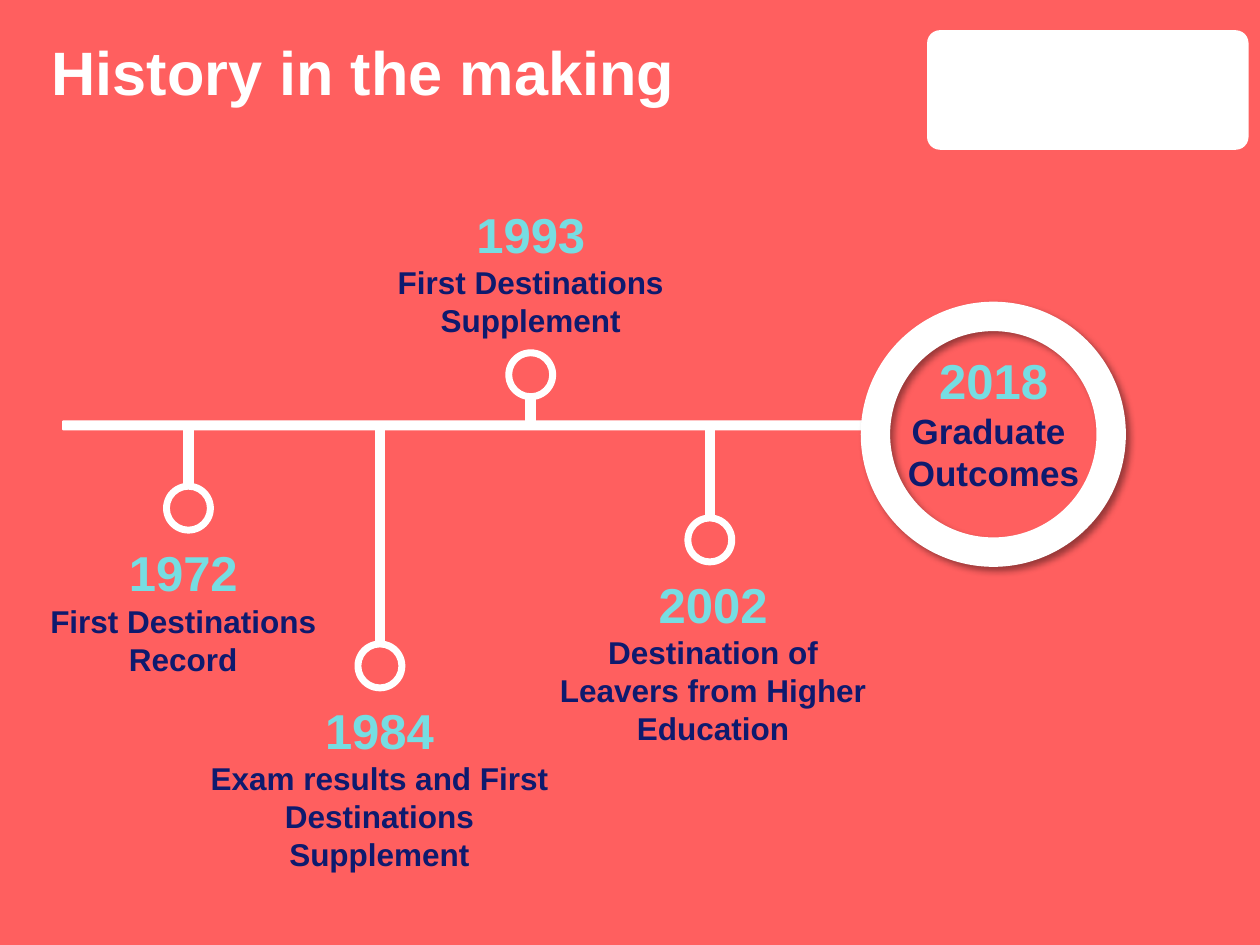
from lxml import etree
from pptx import Presentation
from pptx.dml.color import RGBColor
from pptx.enum.shapes import MSO_CONNECTOR, MSO_SHAPE
from pptx.enum.text import MSO_ANCHOR, PP_ALIGN
from pptx.oxml import parse_xml
from pptx.oxml.ns import nsdecls, qn
from pptx.util import Cm, Pt

CORAL = RGBColor(0xFF, 0x5F, 0x5F)
WHITE = RGBColor(0xFF, 0xFF, 0xFF)
AQUA = RGBColor(0x76, 0xDD, 0xE2)
NAVY = RGBColor(0x0E, 0x1A, 0x6E)

ROUNDED, ARROW, DONUT = MSO_SHAPE.ROUNDED_RECTANGLE, MSO_SHAPE.RIGHT_ARROW, MSO_SHAPE.DONUT
STRAIGHT = MSO_CONNECTOR.STRAIGHT
CENTER, LEFT = PP_ALIGN.CENTER, PP_ALIGN.LEFT
TOP = MSO_ANCHOR.TOP

FONT = "Arial"
RING = 0.99      # diameter of a milestone ring, cm
RING_GAP = 1.07  # from ring top to the text below it, cm
AXIS_Y = 8.6     # where the stems meet the axis, cm

# Text box (left, top, width, height), ring centre x, year, label
MILESTONES = [
    ((3.61, 14.0, 8.08, 3.76), 7.66, "1984", "Exam results and First Destinations Supplement"),
    ((0.61, 10.82, 6.17, 3.0), 3.8, "1972", "First Destinations Record"),
    ((7.26, 3.99, 6.88, 3.0), 10.7, "1993", "First Destinations Supplement"),
    ((10.82, 11.46, 7.11, 3.76), 14.31, "2002", "Destination of Leavers from Higher Education"),
]


def add_white_shape(slide, preset, box, adjustment=None, outlined=True):
    shape = slide.shapes.add_shape(preset, *map(Cm, box))
    shape.shadow.inherit = False
    shape.fill.solid()
    shape.fill.fore_color.rgb = WHITE
    if outlined:
        shape.line.color.rgb = WHITE
        shape.line.width = Pt(1)
    else:
        shape.line.fill.background()
    if adjustment is not None:
        shape.adjustments[0] = adjustment
    return shape


def add_text(slide, box, lines, align=CENTER):
    """Each line is (text, size, colour)."""
    frame = slide.shapes.add_textbox(*map(Cm, box)).text_frame
    frame.word_wrap = True
    frame.vertical_anchor = TOP
    frame.text = "\n".join(text for text, _, _ in lines)
    for paragraph, (_, size, color) in zip(frame.paragraphs, lines):
        paragraph.alignment = align
        font = paragraph.runs[0].font
        font.name, font.size, font.bold = FONT, Pt(size), True
        font.color.rgb = color
    return frame


def add_header(slide, box):
    left, top, width, height = box
    # Panel at the right
    add_white_shape(slide, ROUNDED, (left + 17.65, top + 0.05, 6.48, 2.41), 0.107, outlined=False)
    # Title
    title = add_text(slide, box, [("History in the making", 35, WHITE)], LEFT)
    title.margin_left = title.margin_right = title.margin_top = title.margin_bottom = 0
    title.paragraphs[0].line_spacing = Pt(46)


def add_milestone(slide, box, center_x, year, label):
    left, top, width, height = box
    above_axis = top < AXIS_Y
    ring_top = top + height + 0.07 if above_axis else top - RING_GAP
    stem_end = ring_top + RING - 0.03 if above_axis else ring_top + 0.05

    add_text(slide, box, [(year, 28, AQUA), (label, 18, NAVY)])
    # Stem from the axis to the ring
    stem = slide.shapes.add_connector(
        STRAIGHT, Cm(center_x), Cm(AXIS_Y), Cm(center_x), Cm(stem_end))
    stem.line.color.rgb = WHITE
    stem.line.width = Pt(6)
    etree.SubElement(stem._element.spPr, qn("a:effectLst"))
    add_white_shape(slide, DONUT, (center_x - RING / 2, ring_top, RING, RING), 0.105)


def add_destination(slide, box):
    left, top, width, height = box
    add_text(slide, (left - 0.78, top + 0.84, 6.88, 3.18),
             [("2018", 28, AQUA), ("Graduate ", 20, NAVY), ("Outcomes", 20, NAVY)])
    ring = add_white_shape(slide, DONUT, box, 0.105)
    # Soft shadow to the lower right
    effects = ring._element.spPr.find(qn("a:effectLst"))
    effects.append(parse_xml(
        f'<a:outerShdw {nsdecls("a")} blurRad="{Pt(4)}" dist="{Pt(3)}" dir="2700000" '
        'algn="tl" rotWithShape="0"><a:srgbClr val="000000"><a:alpha val="40000"/>'
        '</a:srgbClr></a:outerShdw>'))


def add_timeline(slide, axis_box):
    left, top, width, height = axis_box
    add_white_shape(slide, ARROW, axis_box)
    add_destination(slide, (left + width - 0.31, top - 2.31, 5.31, 5.31))
    for milestone in MILESTONES:
        add_milestone(slide, *milestone)


def main():
    presentation = Presentation()
    presentation.slide_width, presentation.slide_height = Cm(25.4), Cm(19.05)
    slide = presentation.slides.add_slide(presentation.slide_layouts[6])
    slide.background.fill.solid()
    slide.background.fill.fore_color.rgb = CORAL
    add_header(slide, (1.04, 0.56, 23.6, 2.41))
    add_timeline(slide, (1.27, 8.41, 16.41, 0.33))
    presentation.save("out.pptx")


if __name__ == "__main__":
    main()
